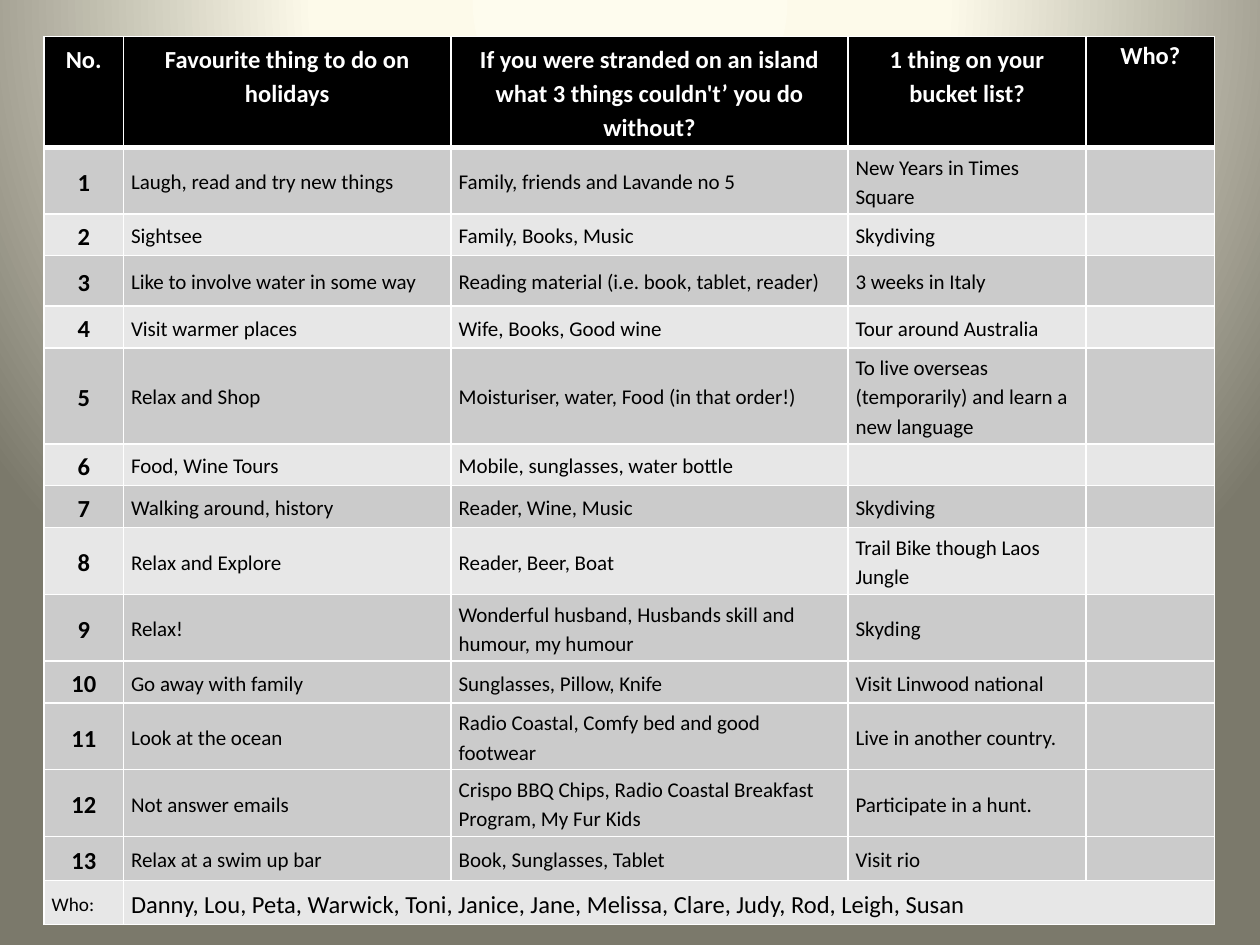
from lxml.etree import SubElement
from pptx import Presentation
from pptx.dml.color import RGBColor
from pptx.enum.text import MSO_ANCHOR, PP_ALIGN
from pptx.oxml import parse_xml
from pptx.oxml.ns import nsdecls, qn
from pptx.util import Inches, Pt

COLORS = {
    "header": "000000",
    "dark": "CBCBCB",
    "light": "E7E7E7",
    "white": "FFFFFF",
    "text": "000000",
    "bg_inner": "FEFCEE",
    "bg_middle": "FDFAEA",
    "bg_outer": "7B796B",
}
COL_WIDTHS = [0.63, 2.6, 3.15, 1.89, 1.02]
ROW_HEIGHTS = [0.88, 0.52, 0.33, 0.4, 0.33, 0.76, 0.33, 0.33,
               0.53, 0.53, 0.33, 0.53, 0.53, 0.35, 0.35]
LIGHT_ROWS = {2, 4, 6, 8, 14}

HEADERS = ["No.", "Favourite thing to do on holidays",
           "If you were stranded on an island what 3 things couldn't’ you do without?",
           "1 thing on your bucket list?", "Who?"]
ANSWERS = [
    ("Laugh, read and try new things", "Family, friends and Lavande no 5", "New Years in Times Square"),
    ("Sightsee", "Family, Books, Music", "Skydiving"),
    ("Like to involve water in some way", "Reading material (i.e. book, tablet, reader)", "3 weeks in Italy"),
    ("Visit warmer places", "Wife, Books, Good wine", "Tour around Australia"),
    ("Relax and Shop", "Moisturiser, water, Food (in that order!)",
     "To live overseas (temporarily) and learn a new language"),
    ("Food, Wine Tours", "Mobile, sunglasses, water bottle", ""),
    ("Walking around, history", "Reader, Wine, Music", "Skydiving"),
    ("Relax and Explore", "Reader, Beer, Boat", "Trail Bike though Laos Jungle"),
    ("Relax!", "Wonderful husband, Husbands skill and humour, my humour", "Skyding"),
    ("Go away with family", "Sunglasses, Pillow, Knife", "Visit Linwood national"),
    ("Look at the ocean", "Radio Coastal, Comfy bed and good footwear", "Live in another country."),
    ("Not answer emails", "Crispo BBQ Chips, Radio Coastal Breakfast Program, My Fur Kids",
     "Participate in a hunt."),
    ("Relax at a swim up bar", "Book, Sunglasses, Tablet", "Visit rio"),
]
NAMES = "Danny, Lou, Peta, Warwick, Toni, Janice, Jane, Melissa, Clare, Judy, Rod, Leigh, Susan"

rows = [HEADERS]
rows += [[str(number), *answer, ""] for number, answer in enumerate(ANSWERS, 1)]
rows.append(["Who:", NAMES, "", "", ""])


def add_border(cell, side, width):
    ln = SubElement(cell._tc.get_or_add_tcPr(), qn(f"a:{side}"), w=str(Pt(width)))
    SubElement(SubElement(ln, qn("a:solidFill")), qn("a:srgbClr"), val=COLORS["white"])


prs = Presentation()
prs.slide_width, prs.slide_height = Inches(10), Inches(7.5)
s = prs.slides.add_slide(prs.slide_layouts[6])

s.background.fill.solid()
bg_pr = s.background._cSld.bg.bgPr
stops = "".join(
    f'<a:gs pos="{pos * 1000}"><a:srgbClr val="{COLORS[name]}"/></a:gs>'
    for pos, name in [(0, "bg_inner"), (40, "bg_middle"), (100, "bg_outer")]
)
gradient = parse_xml(
    f'<a:gradFill {nsdecls("a")} rotWithShape="1"><a:gsLst>{stops}</a:gsLst>'
    '<a:path path="circle"><a:fillToRect l="50000" t="-80000" r="50000" b="180000"/></a:path>'
    "</a:gradFill>"
)
bg_pr.replace(bg_pr.find(qn("a:solidFill")), gradient)

table = s.shapes.add_table(
    len(rows), len(COL_WIDTHS), Inches(0.35), Inches(0.29),
    Inches(sum(COL_WIDTHS)), Inches(sum(ROW_HEIGHTS)),
).table
for column, width in zip(table.columns, COL_WIDTHS):
    column.width = Inches(width)
for row, height in zip(table.rows, ROW_HEIGHTS):
    row.height = Inches(height)

last = len(rows) - 1
table.cell(last, 1).merge(table.cell(last, 4))

for i, row in enumerate(rows):
    fill = "header" if i == 0 else "light" if i in LIGHT_ROWS else "dark"
    for j, text in enumerate(row):
        cell = table.cell(i, j)
        cell.vertical_anchor = MSO_ANCHOR.TOP if i == 0 else MSO_ANCHOR.MIDDLE
        cell.margin_left = cell.margin_right = Inches(0 if j == 4 else 0.06)
        cell.margin_top = cell.margin_bottom = Inches(0 if j == 4 or not text else 0.03)
        for side in ("lnL", "lnR", "lnT", "lnB"):
            thick = (i, side) in {(0, "lnB"), (1, "lnT")}
            add_border(cell, side, 3 if thick else 1)
        cell.fill.solid()
        cell.fill.fore_color.rgb = RGBColor.from_string(COLORS[fill])
        if not text:
            continue
        heading = i == 0 or (j == 0 and i < last)
        p = cell.text_frame.paragraphs[0]
        p.text = text
        p.line_spacing = 1.15
        p.alignment = PP_ALIGN.CENTER if heading else PP_ALIGN.LEFT
        p.font.name = "Calibri"
        p.font.bold = heading
        p.font.size = Pt(14 if heading or text == NAMES else 11 if i == last else 12)
        p.font.color.rgb = RGBColor.from_string(COLORS["white" if i == 0 else "text"])

prs.save("out.pptx")
